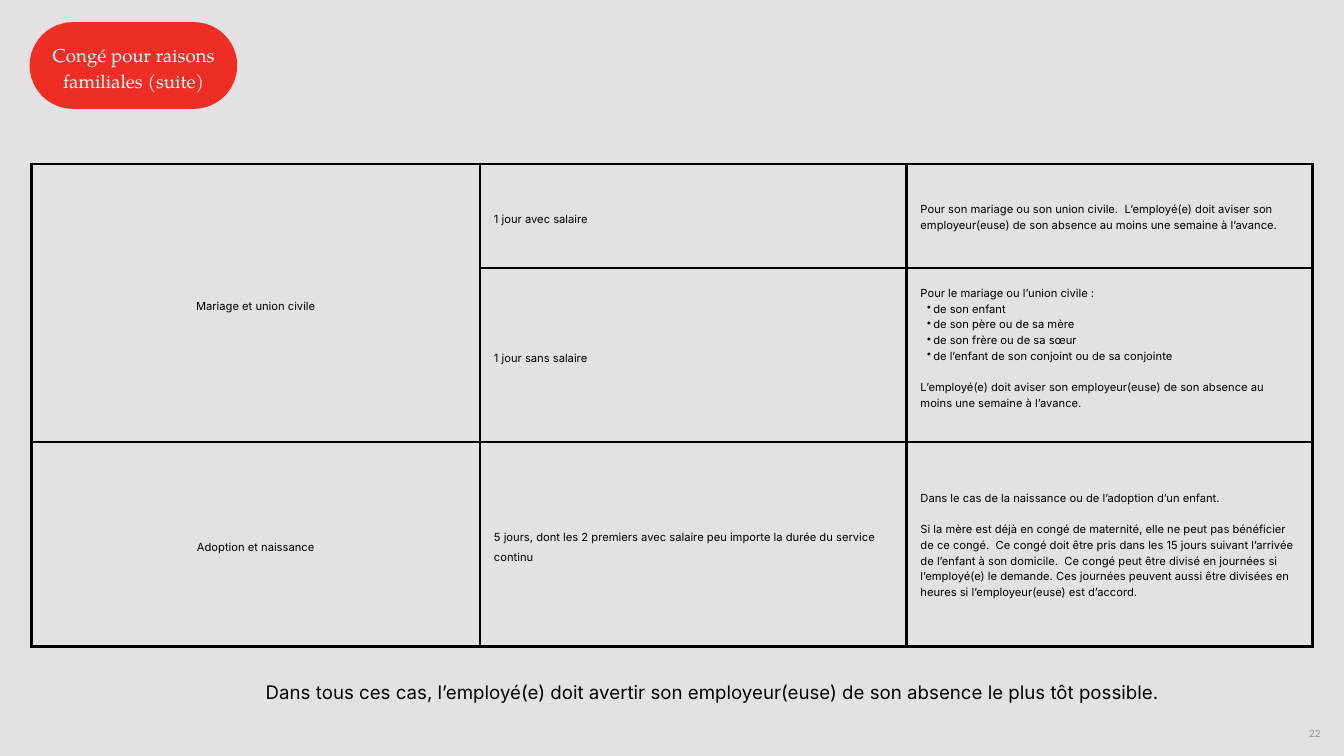
"""Build the slide on family leave for marriage, civil union, adoption and birth."""
from dataclasses import dataclass

from lxml.etree import SubElement
from pptx import Presentation
from pptx.dml.color import RGBColor as Color
from pptx.enum.shapes import MSO_SHAPE as Shape
from pptx.enum.text import MSO_ANCHOR as Anchor, MSO_AUTO_SIZE as AutoSize, PP_ALIGN as Align
from pptx.oxml.ns import qn
from pptx.util import Inches, Pt

TITLE = "Congé pour raisons familiales (suite)"
CLOSING = ("Dans tous ces cas, l’employé(e) doit avertir son employeur(euse) "
           "de son absence le plus tôt possible.")
PAGE_NUMBER = "22"
NOTICE = ("L’employé(e) doit aviser son employeur(euse) de son absence "
          "au moins une semaine à l’avance.")

REASONS = {(0, 0): "Mariage et union civile", (2, 0): "Adoption et naissance"}
DURATIONS = [
    "1 jour avec salaire",
    "1 jour sans salaire",
    "5 jours, dont les 2 premiers avec salaire peu importe la durée du service continu",
]
CONDITIONS = [
    [("first", "Pour son mariage ou son union civile.  " + NOTICE)],
    [
        ("first", "Pour le mariage ou l’union civile :"),
        ("bullet", "de son enfant"),
        ("bullet", "de son père ou de sa mère"),
        ("bullet", "de son frère ou de sa sœur"),
        ("bullet", "de l’enfant de son conjoint ou de sa conjointe"),
        ("spaced", NOTICE),
    ],
    [
        ("first", "Dans le cas de la naissance ou de l’adoption d’un enfant."),
        ("spaced", "Si la mère est déjà en congé de maternité, elle ne peut pas bénéficier de ce "
                   "congé.  Ce congé doit être pris dans les 15 jours suivant l’arrivée de "
                   "l’enfant à son domicile.  Ce congé peut être divisé en journées si "
                   "l’employé(e) le demande. Ces journées peuvent aussi être divisées en heures "
                   "si l’employeur(euse) est d’accord."),
    ],
]

PAGE_WIDTH, PAGE_HEIGHT = Inches(20), Inches(11.25)
AREAS = {
    "pill": (2.2, 2.93, 15.45, 11.47),
    "title": (3.4, 5.24, 13.1, 6.67),
    "table": (2.35, 21.69, 95.3, 63.82),
    "closing": (18.2, 89.87, 69.6, 3.02),
    "number": (87.1, 95.2, 11.65, 3.56),
}
COLUMN_SHARES = (35, 33.3, 31.7)
ROW_SHARES = (21.6, 36, 42.4)


@dataclass(frozen=True)
class Style:
    font: str
    size: float
    color: str
    leading: float = None
    align: Align = Align.LEFT


@dataclass(frozen=True)
class Theme:
    background: str = "E3E1E1"
    accent: str = "EE2E24"
    border: str = "000000"
    border_width: int = Pt(3)
    inset: int = Inches(0.21)
    title: Style = Style("TeX Gyre Pagella", 20, "FFFFFF", 28, Align.CENTER)
    reason: Style = Style("Inter", 12, "000000", 21, Align.CENTER)
    duration: Style = Style("Inter", 12, "000000", 21)
    condition: Style = Style("Inter", 12, "000000", 16.8)
    closing: Style = Style("Inter", 20, "000000", 26, Align.CENTER)
    number: Style = Style("Calibri", 12, "8C8C8C", None, Align.RIGHT)


THEME = Theme()


def area(name):
    left, top, width, height = AREAS[name]
    return (int(PAGE_WIDTH * left / 100), int(PAGE_HEIGHT * top / 100),
            int(PAGE_WIDTH * width / 100), int(PAGE_HEIGHT * height / 100))


def add_bullet(para):
    properties = para._p.get_or_add_pPr()
    properties.set("marL", str(Inches(0.19)))
    properties.set("indent", str(-Inches(0.09)))
    SubElement(properties, qn("a:buChar")).set("char", "•")


def write(frame, items, style):
    for index, (kind, text) in enumerate(items):
        para = frame.add_paragraph() if index else frame.paragraphs[0]
        para.text = text
        if kind == "bullet":
            add_bullet(para)
        if kind == "spaced":
            para.space_before = Pt(style.leading)
        if style.leading:
            para.line_spacing = Pt(style.leading)
        para.alignment = style.align
        para.font.name = style.font
        para.font.size = Pt(style.size)
        para.font.color.rgb = Color.from_string(style.color)


def fill_box(box, name, text, style, anchor=Anchor.TOP):
    box.left, box.top, box.width, box.height = area(name)
    frame = box.text_frame
    frame.word_wrap = True
    frame.auto_size = AutoSize.NONE
    frame.vertical_anchor = anchor
    if anchor == Anchor.TOP:
        frame.margin_left = frame.margin_right = frame.margin_top = frame.margin_bottom = 0
    write(frame, [("first", text)], style)


def format_cell(cell):
    cell.vertical_anchor = Anchor.MIDDLE
    cell.margin_left = cell.margin_right = THEME.inset
    cell.margin_top = cell.margin_bottom = THEME.inset
    properties = cell._tc.get_or_add_tcPr()
    for side in ("lnL", "lnR", "lnT", "lnB"):
        line = SubElement(properties, qn("a:" + side), w=str(THEME.border_width))
        solid = SubElement(line, qn("a:solidFill"))
        SubElement(solid, qn("a:srgbClr"), val=THEME.border)
    cell.fill.background()


def add_title(page):
    title = page.shapes.title
    fill_box(title, "title", TITLE, THEME.title)
    pill = page.shapes.add_shape(Shape.ROUNDED_RECTANGLE, *area("pill"))
    pill.adjustments[0] = 0.5
    pill.shadow.inherit = False
    pill.fill.solid()
    pill.fill.fore_color.rgb = Color.from_string(THEME.accent)
    pill.line.fill.background()
    title.element.addprevious(pill.element)


def add_leave_table(page):
    left, top, width, height = area("table")
    table = page.shapes.add_table(len(ROW_SHARES), len(COLUMN_SHARES),
                                  left, top, width, height).table
    table.first_row = table.horz_banding = False
    for column, share in zip(table.columns, COLUMN_SHARES):
        column.width = int(width * share / 100)
    for row, share in zip(table.rows, ROW_SHARES):
        row.height = int(height * share / 100)
    for cell in table.iter_cells():
        format_cell(cell)
    table.cell(0, 0).merge(table.cell(1, 0))
    for position, reason in REASONS.items():
        write(table.cell(*position).text_frame, [("first", reason)], THEME.reason)
    for row, (duration, condition) in enumerate(zip(DURATIONS, CONDITIONS)):
        write(table.cell(row, 1).text_frame, [("first", duration)], THEME.duration)
        write(table.cell(row, 2).text_frame, condition, THEME.condition)
    table.cell(1, 2).margin_bottom = THEME.inset + Pt(THEME.condition.leading)


def main():
    deck = Presentation()
    deck.slide_width, deck.slide_height = PAGE_WIDTH, PAGE_HEIGHT
    page = deck.slides.add_slide(deck.slide_layouts[5])
    page.background.fill.solid()
    page.background.fill.fore_color.rgb = Color.from_string(THEME.background)
    add_title(page)
    add_leave_table(page)
    closing = page.shapes.add_textbox(*area("closing"))
    fill_box(closing, "closing", CLOSING, THEME.closing)
    number = page.shapes.add_textbox(*area("number"))
    fill_box(number, "number", PAGE_NUMBER, THEME.number, Anchor.MIDDLE)
    deck.save("out.pptx")


if __name__ == "__main__":
    main()
